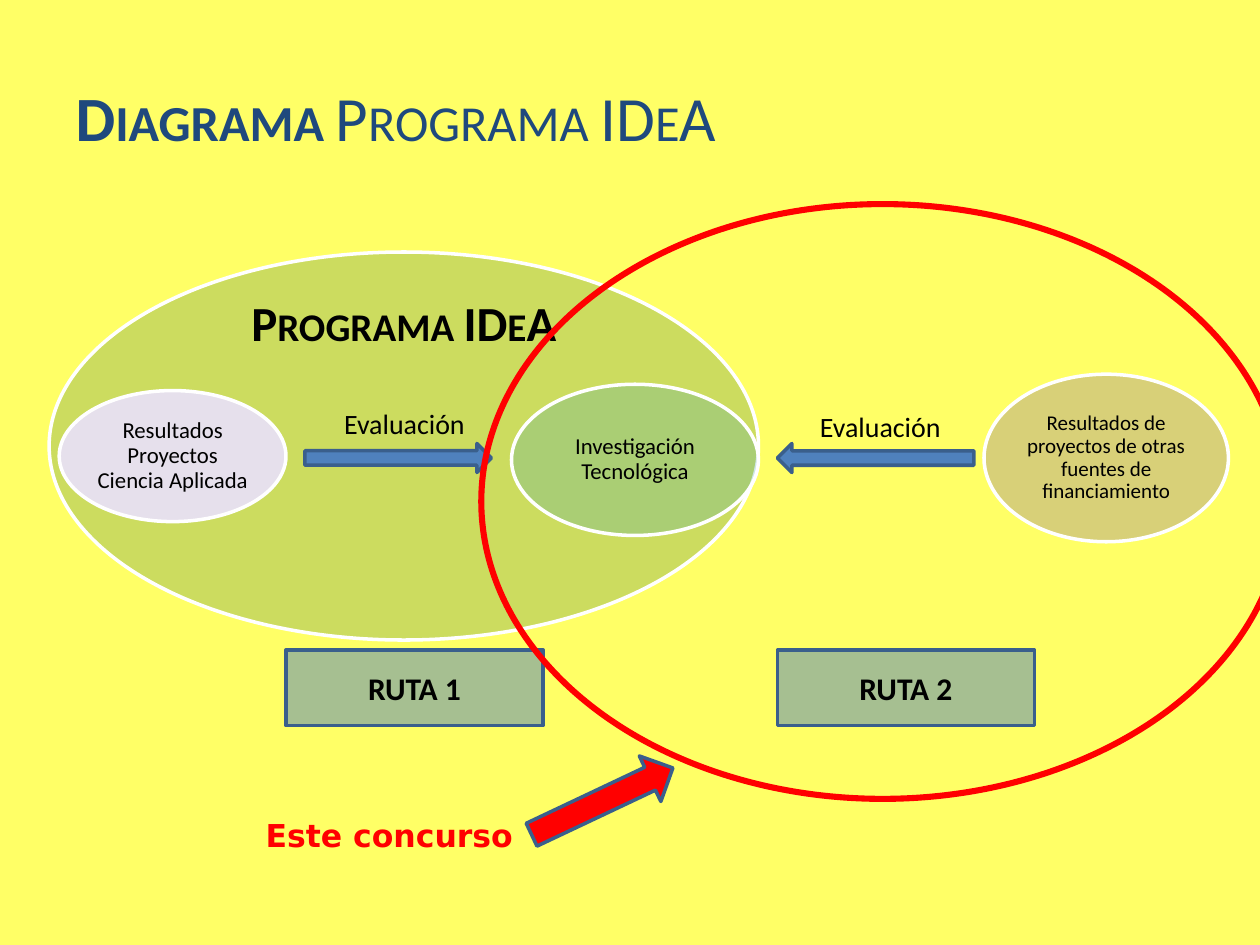
"""Build the Programa IDeA diagram slide."""
import pptx
import pptx.util
import pptx.dml.color
import pptx.enum.shapes
import pptx.enum.text
import pptx.oxml.ns
import lxml.etree

PX = 9144
SHAPES = pptx.enum.shapes.MSO_SHAPE
ALIGN = pptx.enum.text.PP_ALIGN
MIDDLE = pptx.enum.text.MSO_ANCHOR.MIDDLE
BLACK, WHITE, RED, BLUE, NAVY = "000000", "FFFFFF", "FF0000", "4F81BD", "3A5F8C"

TITLE = [("Diagrama", True), (" Programa IDeA", False)]
TITLE_BOX = (50, 30, 781, 125)

PROGRAM_SET = ((39, 200, 563, 308), "9BBB59", 50, "", 13)
STAGES = [
    ((406, 305, 196, 120), "5EAFA6", 30, "Investigación Tecnológica", 13),
    ((47, 310, 180, 104), "E6E0EC", 100, "Resultados Proyectos Ciencia Aplicada", 13),
    ((781, 297, 194, 133), "8064A2", 30,
     "Resultados de proyectos de otras fuentes de financiamiento", 12),
]
ARROWS = [
    ((242, 352, 148, 23), 0, BLUE),
    ((617, 352, 156, 23), 180, BLUE),
    ((416, 616, 124, 40), 334.7, RED),
]
LABELS = [
    ((164, 227, 313, 57), "Programa IDeA", 28, "Calibri", BLACK, True, ALIGN.CENTER, True),
    ((239, 318, 164, 37), "Evaluación", 16, "Calibri", BLACK, False, ALIGN.CENTER, False),
    ((641, 320, 164, 37), "Evaluación", 16, "Calibri", BLACK, False, ALIGN.LEFT, False),
    ((201, 643, 230, 40), "Este concurso", 18, "DejaVu Sans", RED, True, ALIGN.LEFT, False),
]
ROUTES = [("RUTA 1", 227), ("RUTA 2", 617)]
CALL_BOX = (382, 162, 637, 472)


def color(value):
    return pptx.dml.color.RGBColor.from_string(value)


def emu(box):
    return [pptx.util.Emu(length * PX) for length in box]


def format_run(run, size, font, ink, bold=False, small_caps=False):
    run.font.size = pptx.util.Pt(size)
    run.font.name = font
    run.font.color.rgb = color(ink)
    run.font.bold = bold
    if small_caps:
        run.font._element.set("cap", "small")


def write(shape, text, size, font="Calibri", ink=BLACK, bold=False,
          align=ALIGN.CENTER, small_caps=False):
    shape.text_frame.word_wrap = True
    shape.text_frame.text = text
    paragraph = shape.text_frame.paragraphs[0]
    paragraph.alignment = align
    format_run(paragraph.runs[0], size, font, ink, bold, small_caps)
    return paragraph


def add_shape(slide, kind, box, fill, line, width=2, opacity=100):
    shape = slide.shapes.add_shape(kind, *emu(box))
    shape.shadow.inherit = False
    shape.line.color.rgb = color(line)
    shape.line.width = pptx.util.Pt(width)
    if fill is None:
        shape.fill.background()
        return shape
    shape.fill.solid()
    shape.fill.fore_color.rgb = color(fill)
    if opacity < 100:
        tag = pptx.oxml.ns.qn("a:srgbClr")
        fill_color = shape.fill._xPr.find(pptx.oxml.ns.qn("a:solidFill")).find(tag)
        alpha = lxml.etree.SubElement(fill_color, pptx.oxml.ns.qn("a:alpha"))
        alpha.set("val", str(opacity * 1000))
    return shape


def add_stage(slide, box, fill, opacity, text, size):
    shape = add_shape(slide, SHAPES.OVAL, box, fill, WHITE, opacity=opacity)
    if text:
        frame = shape.text_frame
        frame.margin_left = frame.margin_right = emu([2])[0]
        frame.margin_top = frame.margin_bottom = emu([2])[0]
        frame.vertical_anchor = MIDDLE
        write(shape, text, size).line_spacing = 0.9


def add_arrow(slide, box, rotation, fill):
    add_shape(slide, SHAPES.RIGHT_ARROW, box, fill, NAVY).rotation = rotation


def add_title(slide):
    title = slide.shapes.title
    title.left, title.top, title.width, title.height = emu(TITLE_BOX)
    title.text_frame.vertical_anchor = MIDDLE
    paragraph = title.text_frame.paragraphs[0]
    paragraph.alignment = ALIGN.LEFT
    for text, bold in TITLE:
        run = paragraph.add_run()
        run.text = text
        format_run(run, 36, "Calibri", "1F497D", bold, True)


def main():
    presentation = pptx.Presentation()
    presentation.slide_width, presentation.slide_height = emu((1000, 750))
    slide = presentation.slides.add_slide(presentation.slide_layouts[5])
    slide.background.fill.solid()
    slide.background.fill.fore_color.rgb = color("FFFF66")

    add_title(slide)
    for stage in [PROGRAM_SET] + STAGES:
        add_stage(slide, *stage)
    for arrow in ARROWS[:2]:
        add_arrow(slide, *arrow)
    for box, *style in LABELS:
        write(slide.shapes.add_textbox(*emu(box)), *style)
    for text, left in ROUTES:
        route = add_shape(slide, SHAPES.RECTANGLE, (left, 516, 204, 60), BLUE, NAVY, opacity=50)
        route.text_frame.vertical_anchor = MIDDLE
        write(route, text, 18, bold=True)
    add_shape(slide, SHAPES.OVAL, CALL_BOX, None, RED, 3.5)
    add_arrow(slide, *ARROWS[2])
    presentation.save("out.pptx")


if __name__ == "__main__":
    main()
